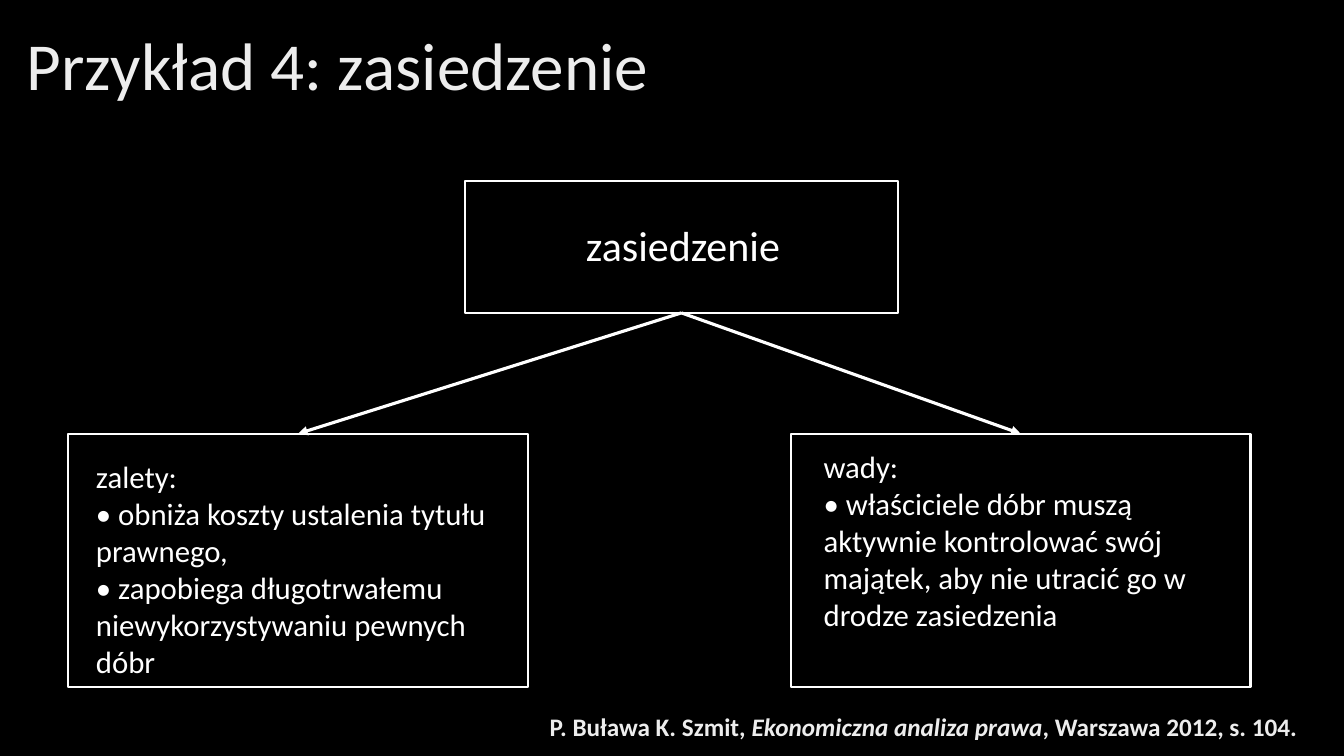
from dataclasses import dataclass

from lxml import etree
from pptx import Presentation
from pptx.dml.color import RGBColor
from pptx.enum.shapes import MSO_CONNECTOR, MSO_SHAPE
from pptx.enum.text import MSO_ANCHOR, PP_ALIGN
from pptx.oxml.ns import qn
from pptx.util import Pt

RECTANGLE = MSO_SHAPE.RECTANGLE
STRAIGHT = MSO_CONNECTOR.STRAIGHT
LEFT, CENTER = PP_ALIGN.LEFT, PP_ALIGN.CENTER
TOP, MIDDLE = MSO_ANCHOR.TOP, MSO_ANCHOR.MIDDLE
SIDE_TOP, SIDE_BOTTOM = 0, 2
EMU_PER_PX = 9525


@dataclass(frozen=True)
class Theme:
    font: str = "Calibri"
    background: RGBColor = RGBColor(0x00, 0x00, 0x00)
    foreground: RGBColor = RGBColor(0xFF, 0xFF, 0xFF)
    muted: RGBColor = RGBColor(0xED, 0xED, 0xED)
    title_size: float = 48
    topic_size: float = 30
    body_size: float = 22
    source_size: float = 18
    frame_width: float = 1.5
    arrow_width: float = 2.25


THEME = Theme()


def px(*lengths):
    return [length * EMU_PER_PX for length in lengths]


def add_frame(slide, left, top, width, height):
    frame = slide.shapes.add_shape(RECTANGLE, *px(left, top, width, height))
    frame.shadow.inherit = False
    frame.fill.background()
    frame.line.color.rgb = THEME.foreground
    frame.line.width = Pt(THEME.frame_width)
    return frame


def add_text(slide, box, paragraphs, size, color=THEME.foreground,
             align=LEFT, anchor=TOP, bold=False):
    """Each paragraph is a list of (text, italic) runs."""
    text_frame = slide.shapes.add_textbox(*px(*box)).text_frame
    text_frame.word_wrap = True
    text_frame.vertical_anchor = anchor
    for index, runs in enumerate(paragraphs):
        paragraph = text_frame.add_paragraph() if index else text_frame.paragraphs[0]
        paragraph.alignment = align
        font = paragraph.font
        font.name, font.size, font.bold = THEME.font, Pt(size), bold
        font.color.rgb = color
        for text, italic in runs:
            run = paragraph.add_run()
            run.text = text
            if italic:
                run.font.italic = True


def plain(*lines):
    return [[(line, False)] for line in lines]


def add_arrow(slide, parent, child):
    arrow = slide.shapes.add_connector(STRAIGHT, 0, 0, 0, 0)
    arrow.begin_connect(parent, SIDE_BOTTOM)
    arrow.end_connect(child, SIDE_TOP)
    arrow.line.color.rgb = THEME.foreground
    arrow.line.width = Pt(THEME.arrow_width)
    etree.SubElement(arrow.line._get_or_add_ln(), qn("a:tailEnd"), type="triangle")
    etree.SubElement(arrow._element.spPr, qn("a:effectLst"))


def main():
    presentation = Presentation()
    presentation.slide_width, presentation.slide_height = px(1280, 720)
    slide = presentation.slides.add_slide(presentation.slide_layouts[6])
    slide.background.fill.solid()
    slide.background.fill.fore_color.rgb = THEME.background

    # Title
    add_text(slide, (16, 7, 995, 108), plain("Przykład 4: zasiedzenie"),
             THEME.title_size, THEME.muted, anchor=MIDDLE)

    # Topic
    topic = add_frame(slide, 443, 172, 412, 126)
    add_text(slide, (494, 204, 313, 59), plain("zasiedzenie"),
             THEME.topic_size, align=CENTER)

    # Advantages and drawbacks
    branches = [
        (65, (82, 431, 406, 223), plain(
            "zalety:",
            "• obniża koszty ustalenia tytułu prawnego,",
            "• zapobiega długotrwałemu niewykorzystywaniu pewnych dóbr")),
        (753, (775, 422, 406, 187), plain(
            "wady:",
            "• właściciele dóbr muszą aktywnie kontrolować swój majątek, "
            "aby nie utracić go w drodze zasiedzenia")),
    ]
    for frame_left, text_box, arguments in branches:
        branch = add_frame(slide, frame_left, 413, 438, 241)
        add_text(slide, text_box, arguments, THEME.body_size)
        add_arrow(slide, topic, branch)

    # Source
    citation = [("P. Buława K. Szmit, ", False),
                ("Ekonomiczna analiza prawa", True),
                (", Warszawa 2012, s. 104.", False)]
    add_text(slide, (514, 673, 750, 38), [citation],
             THEME.source_size, THEME.muted, bold=True)

    presentation.save("out.pptx")


if __name__ == "__main__":
    main()
